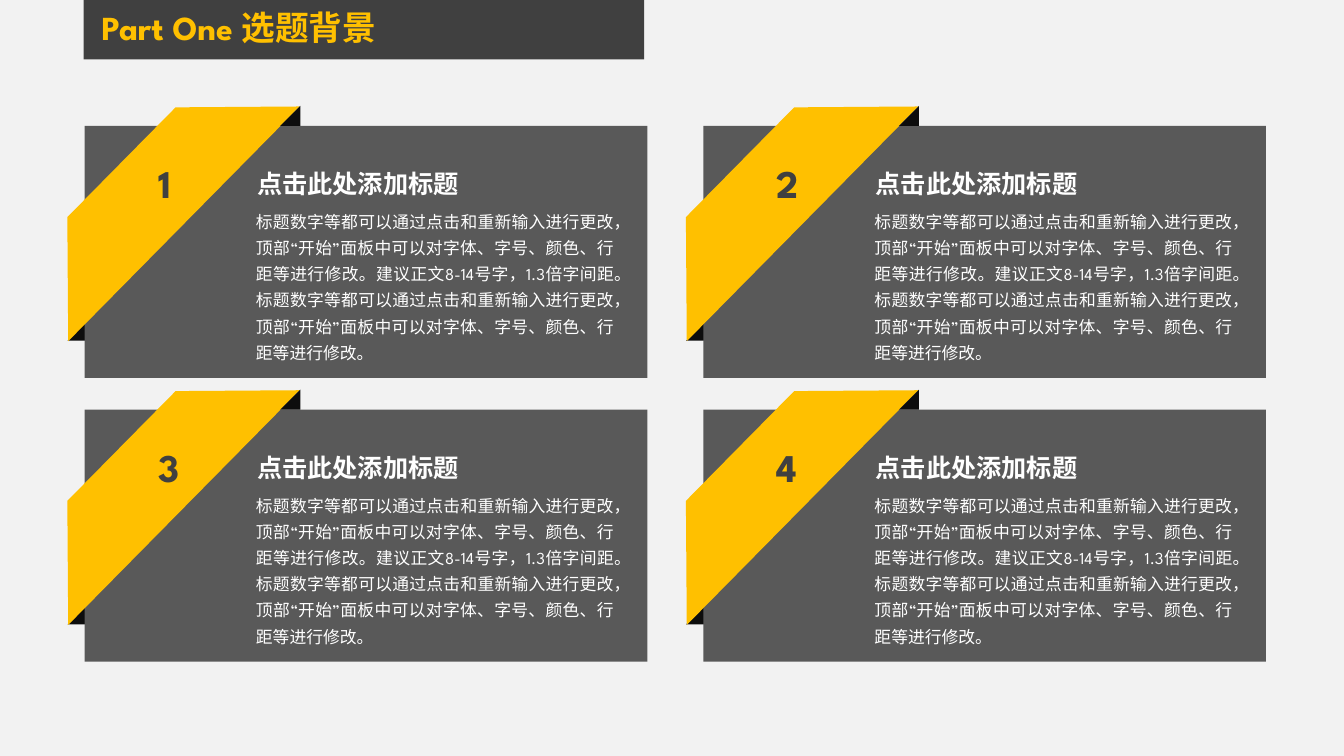
import pptx
import pptx.util
import pptx.dml.color
import pptx.enum.shapes
import pptx.enum.text
import pptx.oxml.ns
import lxml.etree

Inches = pptx.util.Inches
SHAPE = pptx.enum.shapes.MSO_SHAPE
ALIGN = pptx.enum.text.PP_ALIGN
FIT = pptx.enum.text.MSO_AUTO_SIZE

FONT = "League Spartan"
GOLD, WHITE, DARK, GREY, BLACK = "FFC000", "FFFFFF", "404040", "595959", "0D0D0D"
LEFT, TOP = 0.84, 1.25
STEP_X, STEP_Y = 6.135, 2.815
HEAD = "点击此处添加标题"
BODY = (
    "标题数字等都可以通过点击和重新输入进行更改，顶部“开始”面板中可以对字体、字号、颜色、"
    "行距等进行修改。建议正文8-14号字，1.3倍字间距。标题数字等都可以通过点击和重新输入进行更改，"
    "顶部“开始”面板中可以对字体、字号、颜色、行距等进行修改。"
)


def paint(fill, color):
    fill.solid()
    fill.fore_color.rgb = pptx.dml.color.RGBColor.from_string(color)


def add_shape(shapes, kind, box, color, adjust=None, turn=0):
    shape = shapes.add_shape(kind, *map(Inches, box))
    shape.shadow.inherit = False
    shape.line.fill.background()
    paint(shape.fill, color)
    if adjust is not None:
        shape.adjustments[0] = adjust
    shape.rotation = turn


def add_text(shapes, box, text, size, color, bold=True, wrap=False, fit=FIT.SHAPE_TO_FIT_TEXT):
    """Add a one-paragraph text box and return its paragraph."""
    frame = shapes.add_textbox(*map(Inches, box)).text_frame
    frame.word_wrap = wrap
    frame.auto_size = fit
    frame.text = text
    para = frame.paragraphs[0]
    font = para.runs[0].font
    font.name, font.size, font.bold = FONT, pptx.util.Pt(size), bold
    paint(font.fill, color)
    east = lxml.etree.SubElement(font._element, pptx.oxml.ns.qn("a:ea"))
    east.set("typeface", FONT)
    return para


def add_card(slide, x, y, label):
    """Add a numbered panel with a folded ribbon; x, y is the panel's corner."""
    shapes = slide.shapes.add_group_shape().shapes
    add_shape(shapes, SHAPE.ISOSCELES_TRIANGLE, (x - 0.17, y + 1.93, 0.2, 0.2), BLACK, 1)
    add_shape(shapes, SHAPE.RECTANGLE, (x, y, 5.58, 2.5), GREY)
    add_shape(shapes, SHAPE.TRAPEZOID, (x - 0.96, y + 0.23, 3.27, 0.87), GOLD, 1, 314.6)
    add_shape(shapes, SHAPE.ISOSCELES_TRIANGLE, (x + 1.94, y - 0.2, 0.2, 0.2), BLACK, 1)
    add_text(shapes, (x + 0.63, y + 0.28, 0.42, 0.57), label, 28, DARK)
    head = add_text(shapes, (x + 1.6, y + 0.37, 2.22, 0.4), HEAD, 18, WHITE)
    head.alignment = ALIGN.CENTER
    body = add_text(shapes, (x + 1.6, y + 0.74, 3.75, 1.68), BODY, 12, WHITE, False, True)
    body.alignment = ALIGN.JUSTIFY
    body.line_spacing = 1.3


def main():
    deck = pptx.Presentation()
    deck.slide_width, deck.slide_height = Inches(13.33), Inches(7.5)
    slide = deck.slides.add_slide(deck.slide_layouts[6])
    paint(slide.background.fill, "F2F2F2")

    add_shape(slide.shapes, SHAPE.RECTANGLE, (0.83, 0, 5.56, 0.59), DARK)
    title = add_text(slide.shapes, (0.91, 0.06, 3.75, 0.5), "Part One 选题背景",
                     24, GOLD, wrap=True, fit=FIT.NONE)
    title.line_spacing = 0.9
    title.space_before = pptx.util.Pt(10)

    for index in range(4):
        row, col = divmod(index, 2)
        add_card(slide, LEFT + col * STEP_X, TOP + row * STEP_Y, str(index + 1))

    deck.save("out.pptx")


if __name__ == "__main__":
    main()
